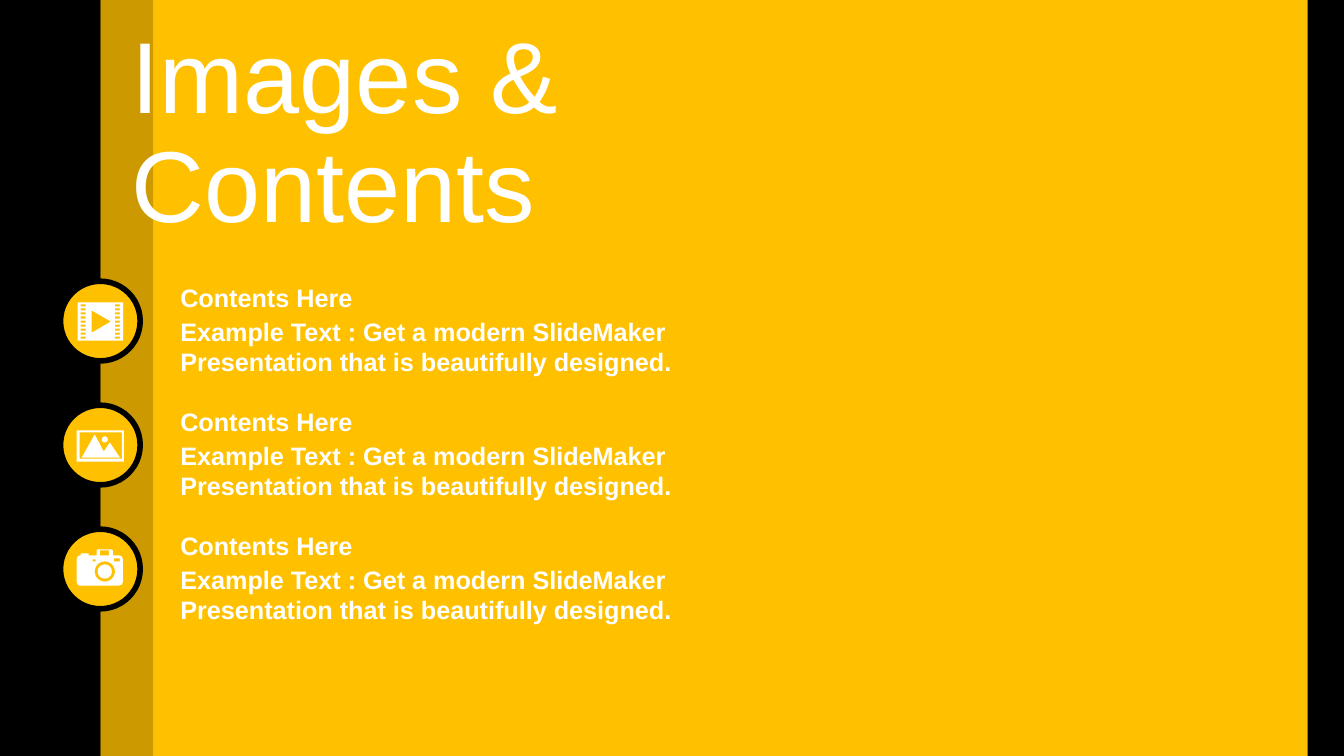
import math

import lxml.etree
import pptx
import pptx.dml.color
import pptx.enum.shapes
import pptx.enum.text
import pptx.oxml.ns
import pptx.util

BLACK = pptx.dml.color.RGBColor(0x00, 0x00, 0x00)
AMBER = pptx.dml.color.RGBColor(0xFF, 0xC0, 0x00)
WHITE = pptx.dml.color.RGBColor(0xFF, 0xFF, 0xFF)
WIDTH, HEIGHT = 13.33, 7.5
BADGE_LEFT, BADGE_TOP, BADGE_SIZE = 0.6, 2.79, 0.79
ROW_PITCH = 1.23
TEXT_LEFT, TEXT_WIDTH = 1.69, 5.77

Inches = pptx.util.Inches
SHAPES = pptx.enum.shapes.MSO_SHAPE

deck = pptx.Presentation()
deck.slide_width, deck.slide_height = Inches(WIDTH), Inches(HEIGHT)
slide = deck.slides.add_slide(deck.slide_layouts[6])
slide.background.fill.solid()
slide.background.fill.fore_color.rgb = AMBER


def corners(left, top, right, bottom):
    return [(left, top), (right, top), (right, bottom), (left, bottom)]


def circle(x, y, radius, steps=48):
    """Return the points of a circle drawn as a fine polygon."""
    angles = [2 * math.pi * step / steps for step in range(steps)]
    return [(x + radius * math.cos(a), y + radius * math.sin(a)) for a in angles]


# Vertical bands
for left, width, colour, opacity in [
    (0, 1, BLACK, 100),
    (1, 6.72, AMBER, 100),
    (1, 0.52, BLACK, 20),
    (WIDTH - 0.36, 0.36, BLACK, 100),
]:
    band = slide.shapes.add_shape(
        SHAPES.RECTANGLE, Inches(left), 0, Inches(width), Inches(HEIGHT))
    band.shadow.inherit = False
    band.fill.solid()
    band.fill.fore_color.rgb = colour
    band.line.fill.background()
    if opacity < 100:
        tint = band.fill._xPr.find(".//" + pptx.oxml.ns.qn("a:srgbClr"))
        lxml.etree.SubElement(
            tint, pptx.oxml.ns.qn("a:alpha"), val=str(opacity * 1000))

# Icon outlines, in hundredths of an inch from the corner of the badge
film = [corners(17, 21, 62, 59), [(31, 29), (31, 51), (50, 40)]]
for hole_left in (20, 54):
    for hole in range(9):
        hole_top = 23 + 4 * hole
        film.append(corners(hole_left, hole_top, hole_left + 5, hole_top + 2))

landscape = [
    corners(16, 25, 63, 56),
    corners(19, 27, 61, 53),
    [(34, 29), (43, 46), (49, 37), (59, 52), (21, 52)],
    circle(44, 34, 3),
]

camera = [
    [(37, 20), (50, 20), (52, 21), (52, 26), (58, 26), (61, 27), (62, 30),
     (62, 52), (61, 55), (58, 56), (19, 56), (17, 55), (16, 52), (16, 30),
     (17, 27), (19, 26), (20, 26), (20, 24), (28, 24), (28, 26), (36, 26),
     (36, 21)],
    corners(39, 21, 48, 26),
    corners(32, 30, 35, 32),
    corners(53, 29, 59, 32),
    circle(44, 42, 10),
    circle(44, 42, 7),
]

texts = [("Images & Contents", 1.21, 0.83, 6.72, 1.03, 72)]

# Badges with their icons
for row, icon in enumerate([film, landscape, camera]):
    top = BADGE_TOP + row * ROW_PITCH
    badge = slide.shapes.add_shape(
        SHAPES.OVAL, Inches(BADGE_LEFT), Inches(top),
        Inches(BADGE_SIZE), Inches(BADGE_SIZE))
    badge.shadow.inherit = False
    badge.fill.solid()
    badge.fill.fore_color.rgb = AMBER
    badge.line.color.rgb = BLACK
    badge.line.width = pptx.util.Pt(4)

    # Freeform points are whole numbers: thousandths of an inch
    outlines = [[(10 * x, 10 * y) for x, y in outline] for outline in icon]
    pen = slide.shapes.build_freeform(*outlines[0][0], scale=914.4)
    for outline in outlines:
        if outline is not outlines[0]:
            pen.move_to(*outline[0])
        pen.add_line_segments(outline[1:], close=True)
    symbol = pen.convert_to_shape(Inches(BADGE_LEFT), Inches(top))
    symbol.shadow.inherit = False
    symbol.fill.solid()
    symbol.fill.fore_color.rgb = WHITE
    symbol.line.fill.background()

    texts += [
        ("Contents Here", TEXT_LEFT, top - 0.04, TEXT_WIDTH, 0.4, 18),
        ("Example Text : Get a modern SlideMaker Presentation that is "
         "beautifully designed.", TEXT_LEFT, top + 0.3, TEXT_WIDTH, 1.01, 18),
    ]

# Title and row texts
for words, left, top, width, height, size in texts:
    frame = slide.shapes.add_textbox(
        Inches(left), Inches(top), Inches(width), Inches(height)).text_frame
    frame.word_wrap = True
    frame.text = words
    paragraph = frame.paragraphs[0]
    if size == 72:
        frame.vertical_anchor = pptx.enum.text.MSO_ANCHOR.MIDDLE
        paragraph.line_spacing = 0.9
    font = paragraph.runs[0].font
    font.name = "Arial"
    font.size = pptx.util.Pt(size)
    font.bold = size == 18
    font.color.rgb = WHITE

deck.save("out.pptx")
